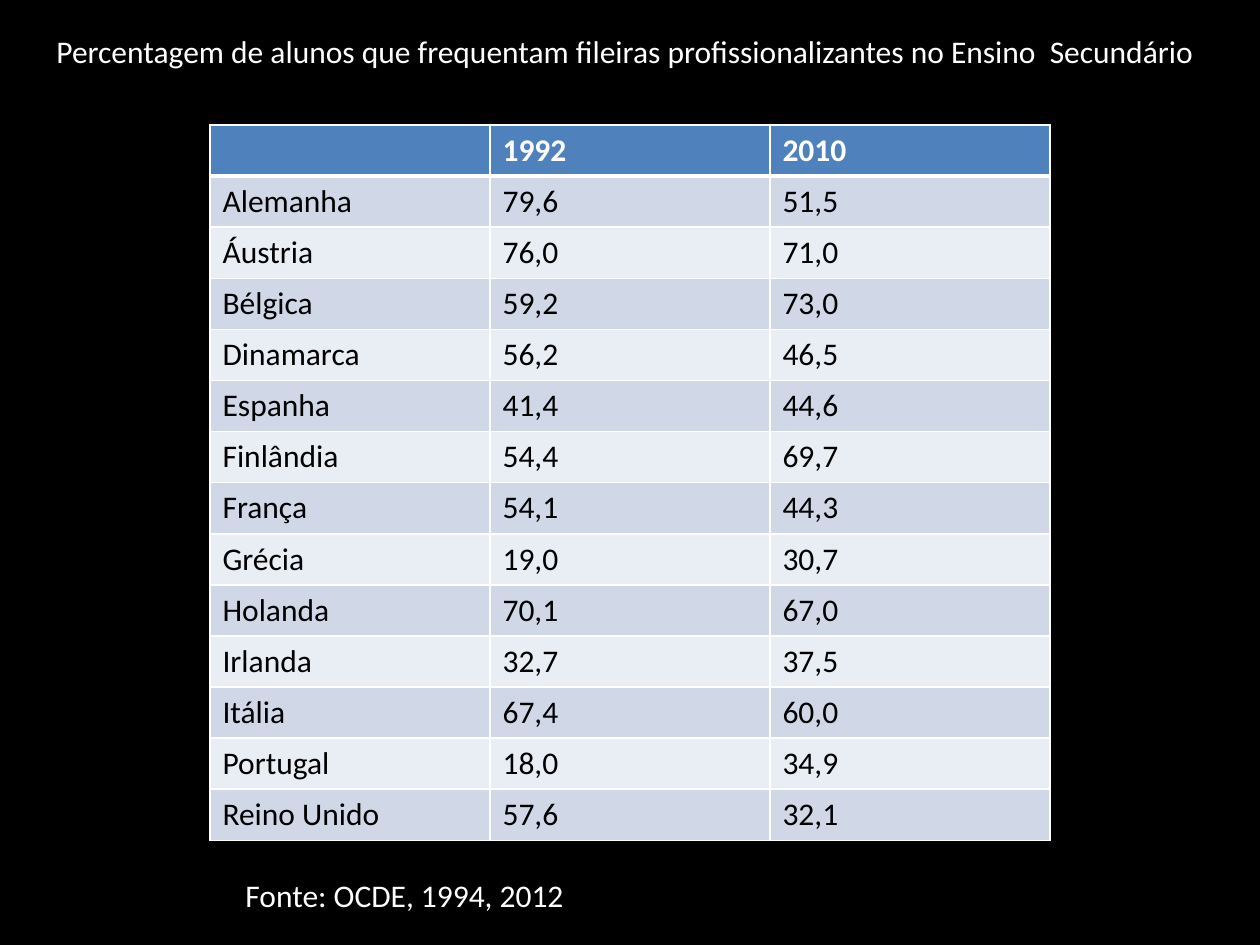
"""Build a slide with a table of student shares by country."""
from dataclasses import dataclass

from lxml import etree
from pptx import Presentation
from pptx.dml.color import RGBColor
from pptx.enum.text import MSO_AUTO_SIZE
from pptx.oxml.ns import qn
from pptx.util import Pt

GROW = MSO_AUTO_SIZE.SHAPE_TO_FIT_TEXT
SCALE = 914400 // 126


@dataclass(frozen=True)
class Theme:
    font: str = "Calibri"
    size: int = 18
    back: str = "000000"
    light: str = "FFFFFF"
    dark: str = "000000"
    head: str = "4F81BD"
    bands: tuple = ("D0D8E8", "E9EDF4")
    thin: int = 1
    thick: int = 3


class Deck:
    def __init__(self, theme, width, height):
        self.theme = theme
        self.file = Presentation()
        self.file.slide_width = width * SCALE
        self.file.slide_height = height * SCALE
        self.slide = self.file.slides.add_slide(self.file.slide_layouts[6])
        self.paint(self.slide.background.fill, theme.back)

    def paint(self, fill, color):
        fill.solid()
        fill.fore_color.rgb = RGBColor.from_string(color)

    def letter(self, frame, text, color, bold=False):
        run = frame.paragraphs[0].add_run()
        run.text = text
        style = {"name": self.theme.font, "size": Pt(self.theme.size), "bold": bold}
        for name, value in style.items():
            setattr(run.font, name, value)
        run.font.color.rgb = RGBColor.from_string(color)

    def label(self, text, box, wrap):
        shape = self.slide.shapes.add_textbox(*(n * SCALE for n in box))
        frame = shape.text_frame
        for name, value in {"word_wrap": wrap, "auto_size": GROW}.items():
            setattr(frame, name, value)
        self.letter(frame, text, self.theme.light)

    def edge(self, cell, side, width):
        props = cell._tc.get_or_add_tcPr()
        line = etree.SubElement(props, qn(f"a:ln{side}"), w=str(Pt(width)))
        fill = etree.SubElement(line, qn("a:solidFill"))
        etree.SubElement(fill, qn("a:srgbClr"), val=self.theme.light)

    def table(self, rows, box):
        look = self.theme
        shape = self.slide.shapes.add_table(
            len(rows), len(rows[0]), *(n * SCALE for n in box))
        for r, row in enumerate(rows):
            top = r == 0
            color = look.light if top else look.dark
            fill = look.head if top else look.bands[(r - 1) % 2]
            for c, text in enumerate(row):
                cell = shape.table.cell(r, c)
                for side in "LRTB":
                    thick = (top and side == "B") or (r == 1 and side == "T")
                    self.edge(cell, side, look.thick if thick else look.thin)
                self.paint(cell.fill, fill)
                if text:
                    self.letter(cell.text_frame, text, color, top)


ROWS = [
    ("", "1992", "2010"),
    ("Alemanha", "79,6", "51,5"),
    ("Áustria", "76,0", "71,0"),
    ("Bélgica", "59,2", "73,0"),
    ("Dinamarca", "56,2", "46,5"),
    ("Espanha", "41,4", "44,6"),
    ("Finlândia", "54,4", "69,7"),
    ("França", "54,1", "44,3"),
    ("Grécia", "19,0", "30,7"),
    ("Holanda", "70,1", "67,0"),
    ("Irlanda", "32,7", "37,5"),
    ("Itália", "67,4", "60,0"),
    ("Portugal", "18,0", "34,9"),
    ("Reino Unido", "57,6", "32,1"),
]
TITLE = ("Percentagem de alunos que frequentam fileiras "
         "profissionalizantes no Ensino  Secundário")


def main():
    deck = Deck(Theme(), 1260, 945)
    deck.table(ROWS, (210, 125, 840, 716))
    deck.label("Fonte: OCDE, 1994, 2012", (233, 870, 348, 51), False)
    deck.label(TITLE, (44, 26, 1191, 51), True)
    deck.file.save("out.pptx")


if __name__ == "__main__":
    main()
